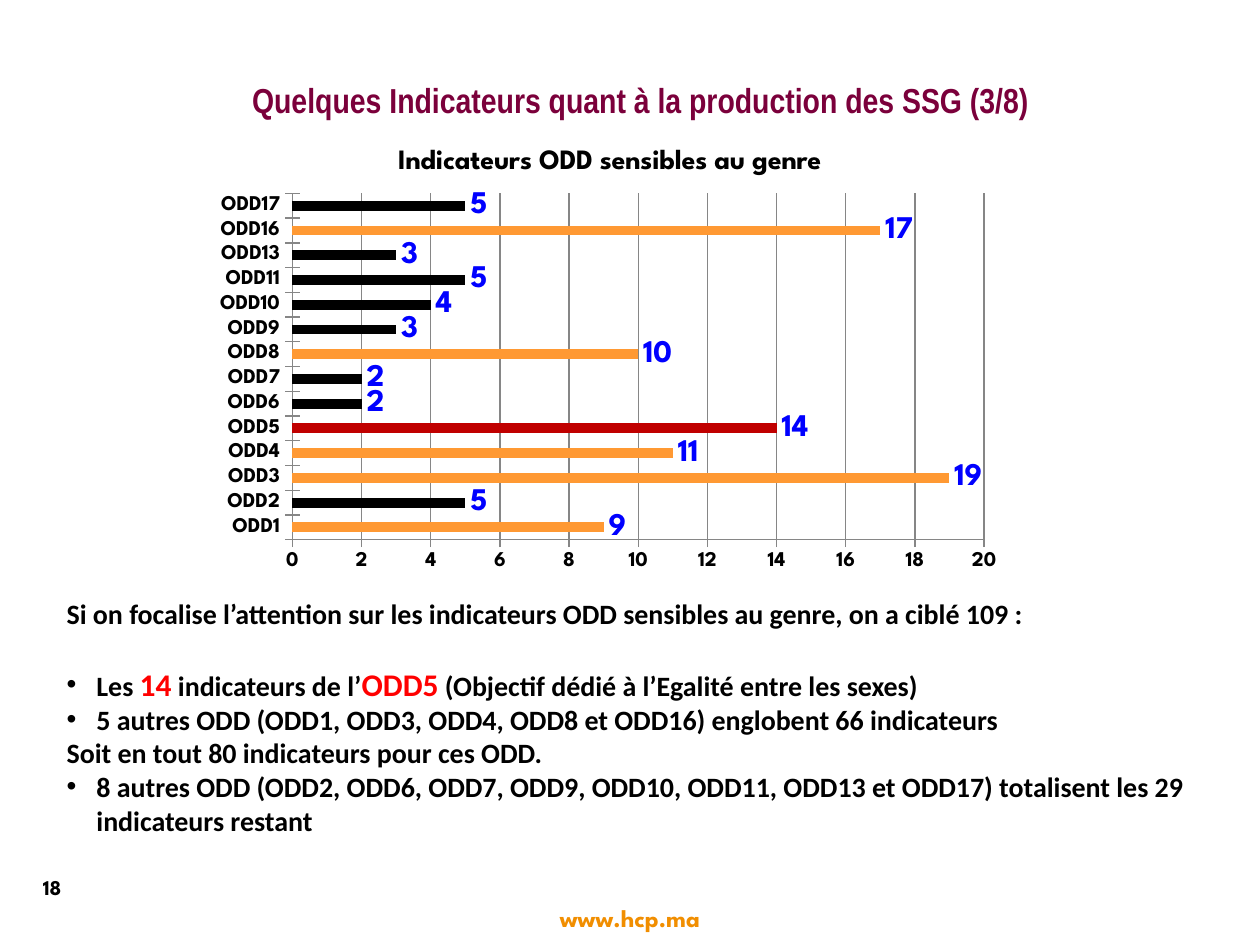
from lxml import etree
from pptx import Presentation
from pptx.chart.data import CategoryChartData
from pptx.dml.color import RGBColor
from pptx.enum.chart import XL_CHART_TYPE, XL_LABEL_POSITION, XL_TICK_MARK
from pptx.enum.shapes import MSO_SHAPE
from pptx.enum.text import MSO_ANCHOR, PP_ALIGN
from pptx.oxml import parse_xml
from pptx.oxml.ns import nsdecls, qn
from pptx.util import Pt

BAR = XL_CHART_TYPE.BAR_CLUSTERED
OUTSIDE_END = XL_LABEL_POSITION.OUTSIDE_END
CROSS = XL_TICK_MARK.CROSS
ELLIPSE = MSO_SHAPE.OVAL
TOP = MSO_ANCHOR.TOP
MIDDLE = MSO_ANCHOR.MIDDLE
LEFT = PP_ALIGN.LEFT
CENTER = PP_ALIGN.CENTER
RIGHT = PP_ALIGN.RIGHT

DISPLAY = "League Spartan"
BLACK = "000000"
ORANGE = "FF9933"
GRAY = "868686"
BODY = {"name": "Calibri", "size": Pt(16), "bold": True, "color": BLACK}
ACCENT = BODY | {"size": Pt(18), "color": "FF0000"}
AXIS = {"name": DISPLAY, "size": Pt(12), "bold": True, "color": BLACK}

INDICATORS = {
    "ODD1": 9, "ODD2": 5, "ODD3": 19, "ODD4": 11, "ODD5": 14,
    "ODD6": 2, "ODD7": 2, "ODD8": 10, "ODD9": 3, "ODD10": 4,
    "ODD11": 5, "ODD13": 3, "ODD16": 17, "ODD17": 5,
}
HIGHLIGHTS = dict.fromkeys(("ODD1", "ODD3", "ODD4", "ODD8", "ODD16"), ORANGE)
HIGHLIGHTS["ODD5"] = "C00000"

PARAGRAPHS = [
    (False, 0, [("Si on focalise l’attention sur les indicateurs ODD sensibles "
                 "au genre, on a ciblé 109 :", BODY)]),
    (True, 19.5, [("Les ", BODY), ("14", ACCENT), (" indicateurs de l’", BODY),
                  ("ODD5", ACCENT),
                  (" (Objectif dédié à l’Egalité entre les sexes)", BODY)]),
    (True, 0, [("5 autres ODD (ODD1, ODD3, ODD4, ODD8 et ODD16) englobent "
                "66 indicateurs", BODY)]),
    (False, 0, [("Soit en tout 80 indicateurs pour ces ODD.", BODY)]),
    (True, 0, [("8 autres ODD (ODD2, ODD6, ODD7, ODD9, ODD10, ODD11, ODD13 et "
                "ODD17) totalisent les 29 indicateurs restant", BODY)]),
]


def paint(color_format, color):
    color_format.rgb = RGBColor.from_string(color)


def format_font(font, values):
    for key, value in values.items():
        if key == "color":
            font.fill.solid()
            paint(font.fill.fore_color, value)
        else:
            setattr(font, key, value)


def paint_line(line, color):
    line.fill.solid()
    paint(line.fill.fore_color, color)
    line.width = Pt(0.75)


def add_span(para, text, values):
    span = para.add_run()
    span.text = text
    format_font(span.font, values)


def fill_line(shape, text, values, align, anchor):
    frame = shape.text_frame
    frame.word_wrap = True
    frame.vertical_anchor = anchor
    para = frame.paragraphs[0]
    para.alignment = align
    add_span(para, text, values)


def add_label(page, box, text, values, anchor):
    fill_line(page.shapes.add_textbox(*map(Pt, box)), text, values, CENTER, anchor)


def add_page_number(page, box, text):
    badge = page.shapes.add_shape(ELLIPSE, *map(Pt, box))
    badge.shadow.inherit = False
    badge.fill.background()
    badge.line.fill.background()
    badge.text_frame.margin_left = 0
    fill_line(badge, text, AXIS, RIGHT, MIDDLE)


def add_bullet(para):
    properties = para._p.get_or_add_pPr()
    properties.set("marL", str(Pt(17)))
    properties.set("indent", str(-Pt(17)))
    etree.SubElement(properties, qn("a:buFont")).set("typeface", "Arial")
    etree.SubElement(properties, qn("a:buChar")).set("char", "•")


def add_body(page, box):
    frame = page.shapes.add_textbox(*map(Pt, box)).text_frame
    frame.word_wrap = True
    frame.vertical_anchor = TOP
    for index, (bulleted, space, spans) in enumerate(PARAGRAPHS):
        para = frame.add_paragraph() if index else frame.paragraphs[0]
        para.alignment = LEFT
        if space:
            para.space_before = Pt(space)
        if bulleted:
            add_bullet(para)
        for text, values in spans:
            add_span(para, text, values)


def place_plot(chart, **fractions):
    plot_area = chart._chartSpace.chart.plotArea
    for layout in plot_area.findall(qn("c:layout")):
        plot_area.remove(layout)
    parts = "".join(f'<c:{key} val="{value}"/>' for key, value in fractions.items())
    plot_area.insert(0, parse_xml(
        f'<c:layout {nsdecls("c")}><c:manualLayout><c:layoutTarget val="inner"/>'
        f'<c:xMode val="edge"/><c:yMode val="edge"/>{parts}'
        "</c:manualLayout></c:layout>"))


def add_indicator_chart(page, box):
    data = CategoryChartData()
    data.categories = list(INDICATORS)
    data.add_series("Series 1", list(INDICATORS.values()))
    chart = page.shapes.add_chart(BAR, *map(Pt, box), data).chart
    format_font(chart.font, {"name": DISPLAY, "size": Pt(10), "color": BLACK})
    chart.has_legend = False
    chart.has_title = True
    para = chart.chart_title.text_frame.paragraphs[0]
    add_span(para, "Indicateurs ODD sensibles au genre", AXIS | {"size": Pt(16)})
    chart.chart_title.include_in_layout = False
    place_plot(chart, x=0.11, y=0.15, w=0.85, h=0.76)

    for axis in (chart.category_axis, chart.value_axis):
        axis.major_tick_mark = CROSS
        format_font(axis.tick_labels.font, AXIS)
        paint_line(axis.format.line, GRAY)
    scale = chart.value_axis
    scale.minimum_scale, scale.maximum_scale, scale.major_unit = 0, 20, 2
    scale.has_major_gridlines = True
    paint_line(scale.major_gridlines.format.line, GRAY)

    plot = chart.plots[0]
    plot.vary_by_categories = False
    plot.gap_width = 150
    series = plot.series[0]
    series.format.fill.solid()
    paint(series.format.fill.fore_color, BLACK)
    for index, category in enumerate(INDICATORS):
        if category in HIGHLIGHTS:
            fill = series.points[index].format.fill
            fill.solid()
            paint(fill.fore_color, HIGHLIGHTS[category])
    labels = series.data_labels
    labels.show_value = True
    labels.position = OUTSIDE_END
    format_font(labels.font, AXIS | {"size": Pt(18), "color": "0000FF"})


def main():
    deck = Presentation()
    deck.slide_width, deck.slide_height = Pt(720), Pt(540)
    page = deck.slides.add_slide(deck.slide_layouts[6])
    add_label(page, (275, 512.5, 170, 24), "www.hcp.ma",
              AXIS | {"size": Pt(14), "color": "F18E00"}, TOP)
    add_label(page, (31, 43, 670, 27.5),
              "Quelques Indicateurs quant à la production des SSG (3/8)",
              {"name": "Arial Narrow", "size": Pt(19.8), "bold": True,
               "color": "7B003B"}, MIDDLE)
    add_page_number(page, (11.5, 489, 36, 36), "18")
    add_indicator_chart(page, (116, 71.5, 465, 260.5))
    add_body(page, (31, 337.5, 657.5, 145.5))
    deck.save("out.pptx")


if __name__ == "__main__":
    main()
